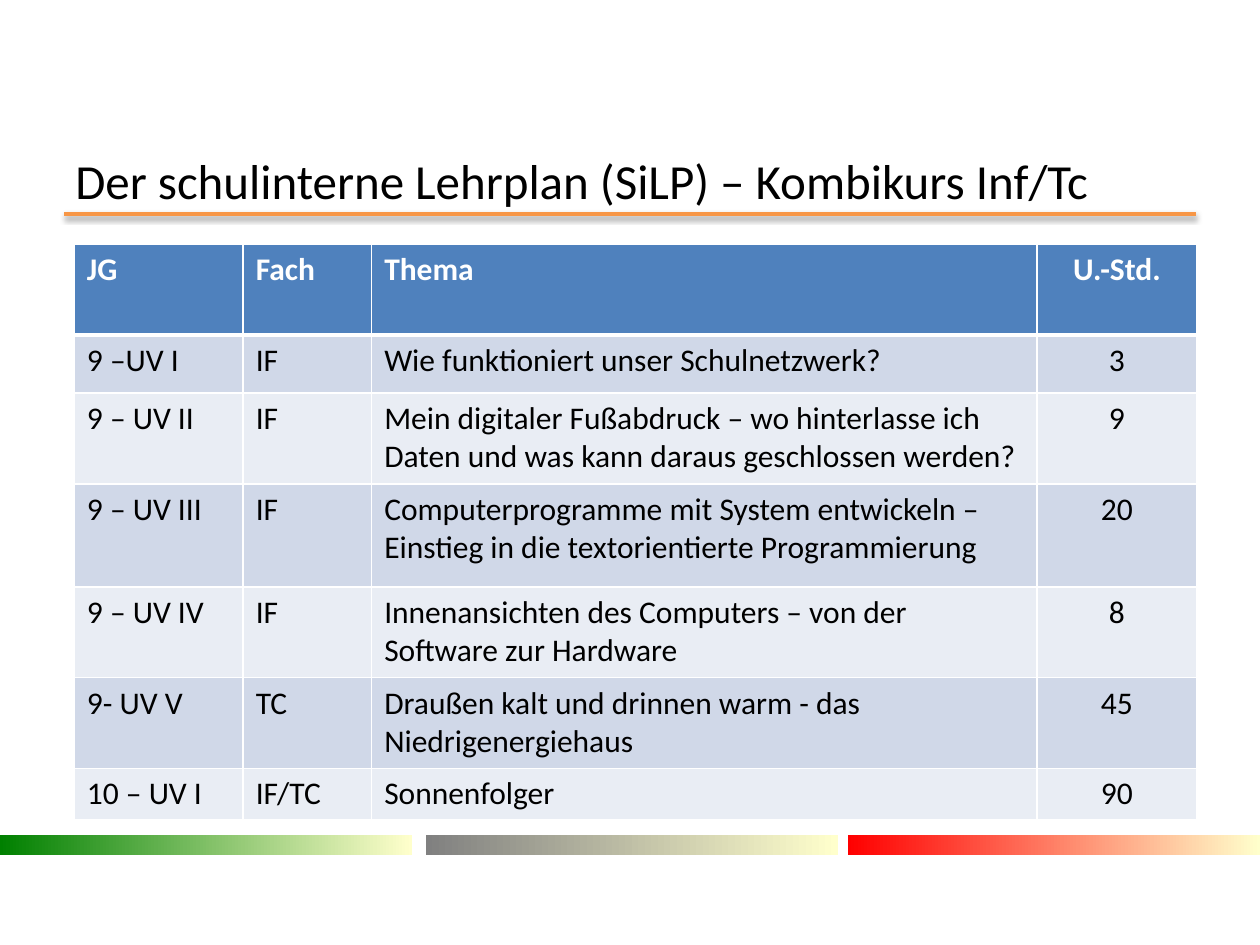
"""Build the slide with the curriculum table of the combined course Inf/Tc."""
from lxml import etree
from pptx import Presentation
from pptx.dml.color import RGBColor
from pptx.enum import shapes, text
from pptx.oxml import ns
from pptx.util import Inches, Pt

BLACK = RGBColor(0x00, 0x00, 0x00)
WHITE = RGBColor(0xFF, 0xFF, 0xFF)
ORANGE = RGBColor(0xF7, 0x96, 0x46)
BLUE = RGBColor(0x4F, 0x81, 0xBD)
BAND_DARK = RGBColor(0xD0, 0xD8, 0xE8)
BAND_LIGHT = RGBColor(0xE9, 0xED, 0xF4)
GREEN = RGBColor(0x00, 0x80, 0x00)
GRAY = RGBColor(0x80, 0x80, 0x80)
RED = RGBColor(0xFF, 0x00, 0x00)
CREAM = RGBColor(0xFF, 0xFF, 0xCC)

ROWS = [
    ("JG", "Fach", "Thema", "U.-Std."),
    ("9 –UV I", "IF", "Wie funktioniert unser Schulnetzwerk?", "3"),
    ("9 – UV II", "IF", "Mein digitaler Fußabdruck – wo hinterlasse ich Daten und was kann daraus geschlossen werden?", "9"),
    ("9 – UV III", "IF", "Computerprogramme mit System entwickeln – Einstieg in die textorientierte Programmierung", "20"),
    ("9 – UV IV", "IF", "Innenansichten des Computers – von der Software zur Hardware", "8"),
    ("9- UV V", "TC", "Draußen kalt und drinnen warm - das Niedrigenergiehaus", "45"),
    ("10 – UV I", "IF/TC", "Sonnenfolger", "90"),
]
COL_WIDTHS = [1.34, 1.02, 5.28, 1.27]
ROW_HEIGHTS = [0.72, 0.46, 0.72, 0.82, 0.72, 0.72, 0.39]


def add_text(p, wording, size, color, bold=False):
    r = p.add_run()
    r.text = wording
    fmt = {"name": "Calibri", "size": Pt(size), "bold": bold}
    for key, value in fmt.items():
        setattr(r.font, key, value)
    r.font.color.rgb = color


def add_el(parent, tag, **attrs):
    el = etree.SubElement(parent, ns.qn(tag))
    for key, value in attrs.items():
        el.set(key, str(value))
    return el


prs = Presentation()
prs.slide_width, prs.slide_height = Inches(10), Inches(7.5)
s = prs.slides.add_slide(prs.slide_layouts[6])

line = s.shapes.add_connector(
    shapes.MSO_CONNECTOR.STRAIGHT, Inches(0.51), Inches(1.7), Inches(9.49), Inches(1.7))
line.line.color.rgb = ORANGE
line.line.width = Pt(2)
effects = add_el(line._element.spPr, "a:effectLst")
shadow = add_el(effects, "a:outerShdw", blurRad=Pt(3.1), dist=Pt(1.6), dir=5400000, rotWithShape=0)
add_el(add_el(shadow, "a:srgbClr", val=BLACK), "a:alpha", val=38000)

for left, color in [(0, GREEN), (3.38, GRAY), (6.73, RED)]:
    sp = s.shapes.add_shape(
        shapes.MSO_SHAPE.RECTANGLE, Inches(left), Inches(6.63), Inches(3.27), Inches(0.16))
    sp.shadow.inherit = False
    sp.line.fill.background()
    sp.fill.gradient()
    sp.fill.gradient_angle = 0
    for stop, rgb, position in zip(sp.fill.gradient_stops, (color, CREAM), (0, 1)):
        stop.color.rgb = rgb
        stop.position = position

table = s.shapes.add_table(
    len(ROWS), len(COL_WIDTHS), Inches(0.59), Inches(1.94),
    Inches(sum(COL_WIDTHS)), Inches(sum(ROW_HEIGHTS))).table
for col, width in zip(table.columns, COL_WIDTHS):
    col.width = Inches(width)
for row, height in zip(table.rows, ROW_HEIGHTS):
    row.height = Inches(height)

for i, row in enumerate(ROWS):
    header = i == 0
    fill = BLUE if header else BAND_DARK if i % 2 else BAND_LIGHT
    widths = {"L": 1, "R": 1, "T": 3 if i == 1 else 1, "B": 3 if header else 1}
    for j, wording in enumerate(row):
        cell = table.cell(i, j)
        p = cell.text_frame.paragraphs[0]
        if j == 3:
            p.alignment = text.PP_ALIGN.CENTER
        add_text(p, wording, 18, WHITE if header else BLACK, header)
        tcPr = cell._tc.get_or_add_tcPr()
        for side, width in widths.items():
            ln = add_el(tcPr, f"a:ln{side}", w=Pt(width))
            add_el(add_el(ln, "a:solidFill"), "a:srgbClr", val=WHITE)
        cell.fill.solid()
        cell.fill.fore_color.rgb = fill

title = s.shapes.add_textbox(Inches(0.5), Inches(1.23), Inches(9), Inches(0.39))
tf = title.text_frame
tf.word_wrap = True
tf.vertical_anchor = text.MSO_ANCHOR.MIDDLE
add_text(tf.paragraphs[0], "Der schulinterne Lehrplan (SiLP) – Kombikurs Inf/Tc", 28, BLACK)

prs.save("out.pptx")
